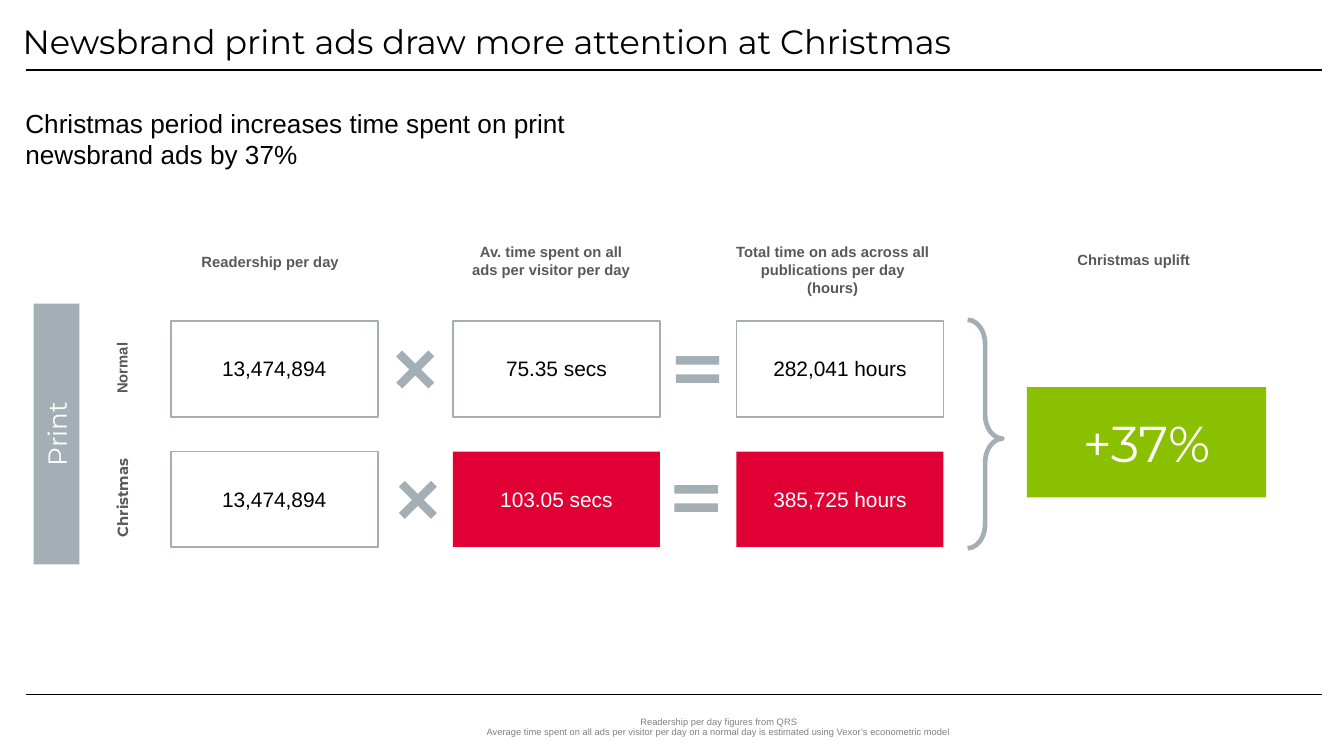
"""Build the slide on Christmas attention to newsbrand print ads."""
from dataclasses import dataclass

from lxml.etree import SubElement
from pptx import Presentation
from pptx.dml.color import RGBColor
from pptx.enum.shapes import MSO_CONNECTOR, MSO_SHAPE
from pptx.enum.text import MSO_ANCHOR, MSO_AUTO_SIZE, PP_ALIGN
from pptx.oxml.ns import qn
from pptx.util import Inches, Pt

COLOURS = {
    "black": "000000",
    "white": "FFFFFF",
    "grey": "A3AEB5",
    "label": "595959",
    "note": "808080",
    "red": "E00034",
    "green": "8AC000",
}
SLIDE_WIDTH = 10
SLIDE_HEIGHT = SLIDE_WIDTH * 9 / 16
COLUMN_LEFTS = (1.27, 3.37, 5.48)
ROW_TOP, ROW_STEP = 2.39, 0.97
LABEL = {"size": 7.9, "colour": "label", "bold": True, "align": PP_ALIGN.CENTER, "grow": True}
CELL = {"size": 11.2, "align": PP_ALIGN.CENTER, "anchor": MSO_ANCHOR.MIDDLE,
        "spacing": Pt(12.8), "inset": 0.06}
BANNER = {"font": "Montserrat", "colour": "white", "align": PP_ALIGN.CENTER,
          "anchor": MSO_ANCHOR.MIDDLE, "inset": 0.06}


@dataclass(frozen=True)
class Box:
    """Position and size in inches, with a rotation in degrees."""
    left: float
    top: float
    width: float
    height: float
    rotation: float = 0


@dataclass(frozen=True)
class Row:
    """Values of one period and the places of its operators."""
    values: tuple[str, str, str]
    highlighted: bool
    multiply: Box
    equal: Box


HEADINGS = (
    ("Readership per day", Box(1.38, 1.83, 1.26, 0.23)),
    ("Av. time spent on all ads per visitor per day", Box(3.38, 1.76, 1.44, 0.37)),
    ("Total time on ads across all publications per day (hours)", Box(5.37, 1.76, 1.65, 0.5)),
    ("Christmas uplift", Box(7.61, 1.82, 1.65, 0.23)),
)
ROWS = (
    Row(("13,474,894", "75.35 secs", "282,041 hours"), False,
        Box(2.86, 2.52, 0.46, 0.46), Box(4.97, 2.37, 0.44, 0.76)),
    Row(("13,474,894", "103.05 secs", "385,725 hours"), True,
        Box(2.88, 3.49, 0.46, 0.46), Box(4.96, 3.33, 0.44, 0.76)),
)


def rgb(name: str) -> RGBColor:
    """Return a named colour."""
    return RGBColor.from_string(COLOURS[name])


def inches(box: Box) -> tuple:
    """Return the box as four lengths."""
    return tuple(Inches(value) for value in (box.left, box.top, box.width, box.height))


def write_text(shape, text: str, *, size: float, font: str = "Arial", colour: str = "black",
               bold: bool = False, align=PP_ALIGN.LEFT, anchor=MSO_ANCHOR.TOP,
               spacing=None, inset: float | None = None, grow: bool = False,
               wrap: bool = True) -> None:
    """Write one formatted paragraph, with line breaks at newlines."""
    frame = shape.text_frame
    frame.word_wrap = wrap
    frame.vertical_anchor = anchor
    if grow:
        frame.auto_size = MSO_AUTO_SIZE.SHAPE_TO_FIT_TEXT
    if inset is not None:
        frame.margin_left = frame.margin_right = Inches(inset)
        frame.margin_top = frame.margin_bottom = Inches(inset)
    paragraph = frame.paragraphs[0]
    paragraph.text = text.replace("\n", "\v")
    paragraph.alignment = align
    if spacing is not None:
        paragraph.line_spacing = spacing
    for run in paragraph.runs:
        run.font.size = Pt(size)
        run.font.name = font
        run.font.bold = bold
        run.font.color.rgb = rgb(colour)
    for line_break in paragraph._p.findall(qn("a:br")):
        SubElement(line_break, qn("a:rPr")).set("sz", str(int(size * 100)))


def add_text(slide, box: Box, text: str, **text_format) -> None:
    """Add a text box."""
    shape = slide.shapes.add_textbox(*inches(box))
    shape.rotation = box.rotation
    write_text(shape, text, **text_format)


def add_shape(slide, kind: MSO_SHAPE, box: Box, *, fill: str | None = None,
              line: str | None = None, line_width: float = 1,
              adjustments: tuple[float, ...] = ()):
    """Add a preset shape without a shadow."""
    shape = slide.shapes.add_shape(kind, *inches(box))
    shape.shadow.inherit = False
    shape.rotation = box.rotation
    for index, value in enumerate(adjustments):
        shape.adjustments[index] = value
    if fill:
        shape.fill.solid()
        shape.fill.fore_color.rgb = rgb(fill)
    else:
        shape.fill.background()
    if line:
        shape.line.color.rgb = rgb(line)
        shape.line.width = Pt(line_width)
    else:
        shape.line.fill.background()
    return shape


def add_panel(slide, box: Box, text: str, fill: str, line: str | None = None, **text_format) -> None:
    """Add a square-cornered panel holding text."""
    panel = add_shape(slide, MSO_SHAPE.ROUNDED_RECTANGLE, box, fill=fill, line=line, adjustments=(0,))
    write_text(panel, text, **text_format)


def add_rule(slide, top: float) -> None:
    """Add a thin horizontal rule."""
    rule = slide.shapes.add_connector(
        MSO_CONNECTOR.STRAIGHT, Inches(0.19), Inches(top), Inches(9.84), Inches(top))
    rule.line.color.rgb = rgb("black")
    rule.line.width = Pt(0.75)
    SubElement(rule._element.spPr, qn("a:effectLst"))


def add_row(slide, row: Row, top: float) -> None:
    """Add the three values of a period and the operators between them."""
    for column, (left, value) in enumerate(zip(COLUMN_LEFTS, row.values)):
        red = row.highlighted and column > 0
        add_panel(slide, Box(left, top, 1.54, 0.71), value,
                  "red" if red else "white", None if red else "grey",
                  colour="white" if red else "black", **CELL)
    add_shape(slide, MSO_SHAPE.MATH_MULTIPLY, row.multiply, fill="grey", adjustments=(0.135,))
    add_shape(slide, MSO_SHAPE.MATH_EQUAL, row.equal, fill="grey", adjustments=(0.085, 0.094))


def main() -> None:
    """Build and save the presentation."""
    presentation = Presentation()
    presentation.slide_width = Inches(SLIDE_WIDTH)
    presentation.slide_height = Inches(SLIDE_HEIGHT)
    slide = presentation.slides.add_slide(presentation.slide_layouts[6])

    for top in (0.52, 5.17):
        add_rule(slide, top)
    add_text(slide, Box(0.07, 0.14, 9.76, 0.39),
             "Newsbrand print ads draw more attention at Christmas",
             size=18, font="Montserrat", spacing=0.9)
    add_text(slide, Box(0.42, 3.59, 0.98, 0.23, 270), "Christmas", font="Montserrat", **LABEL)
    add_text(slide, Box(0.57, 2.58, 0.76, 0.32, 270), "Normal", wrap=False, **LABEL)
    for index, row in enumerate(ROWS):
        add_row(slide, row, ROW_TOP + index * ROW_STEP)
    add_shape(slide, MSO_SHAPE.RIGHT_BRACE, Box(7.2, 2.38, 0.26, 1.7),
              line="grey", line_width=2.5, adjustments=(0.696, 0.52))
    add_panel(slide, Box(7.64, 2.88, 1.78, 0.82), "+37%", "green", size=27, **BANNER)
    for heading, box in HEADINGS:
        add_text(slide, box, heading, **LABEL)
    add_panel(slide, Box(-0.55, 3.06, 1.94, 0.34, 270), "Print", "grey", size=14, **BANNER)
    add_text(slide, Box(0.09, 0.75, 5, 0.57),
             "Christmas period increases time spent on print newsbrand ads by 37%",
             size=14, grow=True)
    add_text(slide, Box(1.27, 5.27, 8.16, 0.28),
             "Readership per day figures from QRS\nAverage time spent on all ads per visitor "
             "per day on a normal day is estimated using Vexor’s econometric model",
             size=5, colour="note", align=PP_ALIGN.CENTER, anchor=MSO_ANCHOR.MIDDLE, spacing=0.9)
    presentation.save("out.pptx")


if __name__ == "__main__":
    main()
